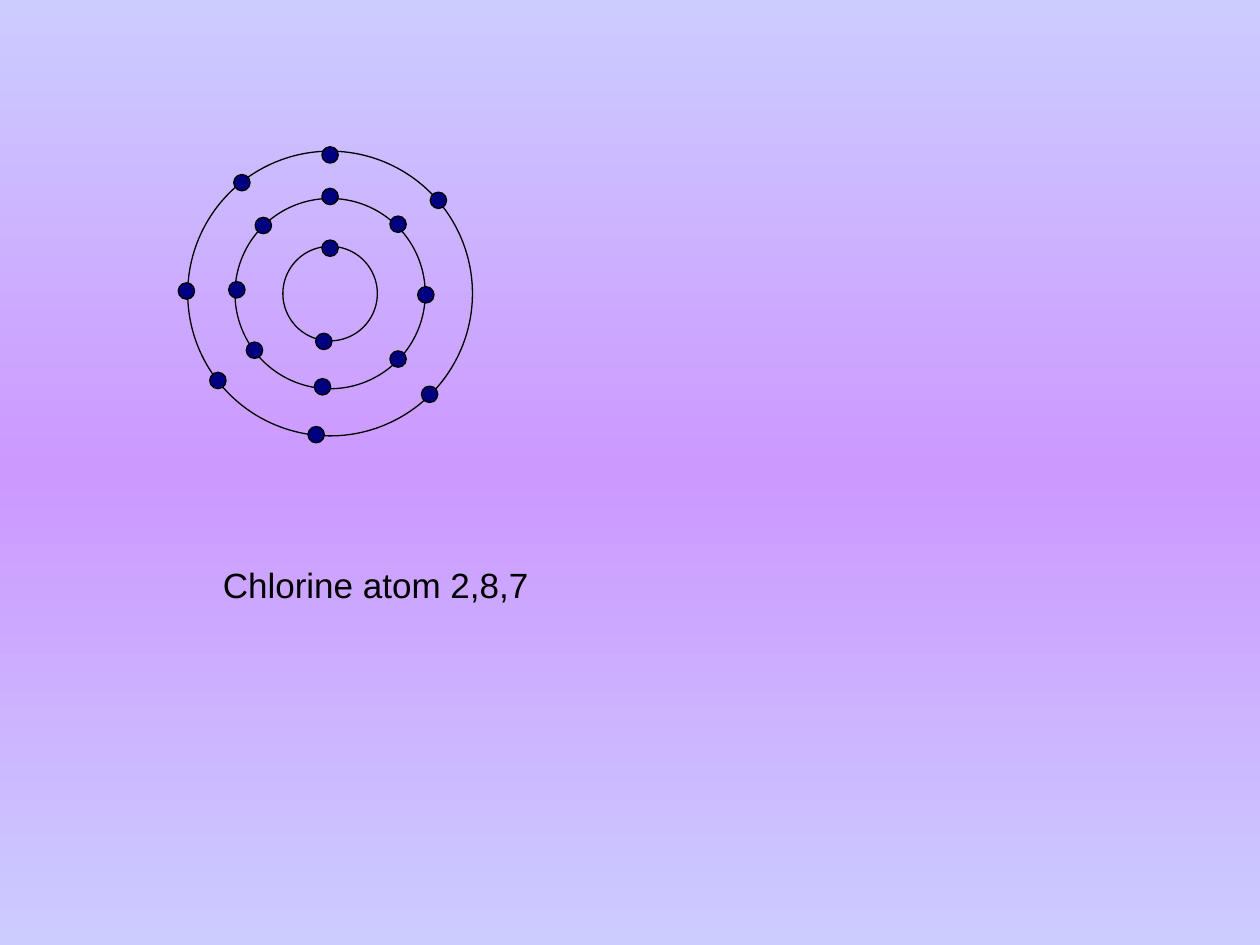
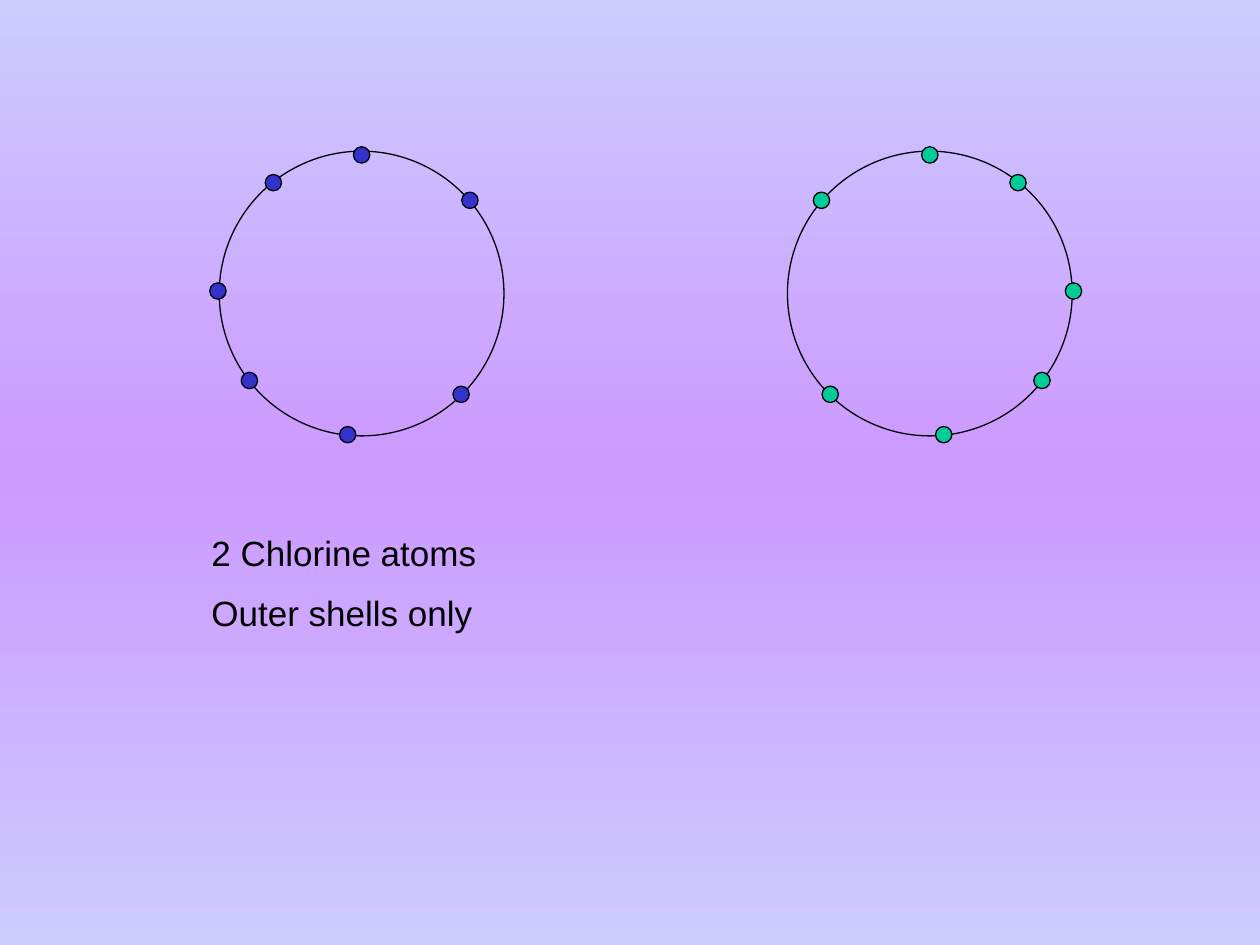
"""Build two slides showing the electron shells of chlorine atoms."""
from copy import deepcopy

from pptx import Presentation
from pptx.dml.color import RGBColor
from pptx.enum.shapes import MSO_SHAPE
from pptx.enum.text import MSO_AUTO_SIZE
from pptx.oxml.ns import qn
from pptx.util import Inches, Pt

OVAL = MSO_SHAPE.OVAL
GROW = MSO_AUTO_SIZE.SHAPE_TO_FIT_TEXT
FONT = "Arial"
COLORS = {
    "edge": "CCCCFF", "middle": "CC99FF", "ink": "000000",
    "navy": "000080", "blue": "3333CC", "green": "00CC99",
}
ELECTRON_SIZE = 0.13
ATOM_TOP_CENTER = 2.33

# Each shell: diameter and electron centres measured from the nucleus.
INNER_SHELL = (0.75, [(-0.05, 0.38), (0, -0.36)])
MIDDLE_SHELL = (1.51, [
    (0.54, 0.52), (-0.6, 0.45), (-0.53, -0.54), (0.76, 0.01),
    (-0.74, -0.03), (0, -0.77), (-0.06, 0.74), (0.54, -0.55),
])
OUTER_SHELL = (2.26, [
    (0, -1.1), (-0.7, -0.88), (-1.14, -0.02), (-0.89, 0.69),
    (-0.11, 1.12), (0.79, 0.8), (0.86, -0.74),
])


def rgb(name):
    """Return the named colour."""
    return RGBColor.from_string(COLORS[name])


def set_background(master):
    """Give every slide the vertical three-stop gradient."""
    fill = master.background.fill
    fill.gradient()
    fill.gradient_angle = 270
    stop_list = master.element.find(".//" + qn("a:gsLst"))
    stop_list.append(deepcopy(stop_list[0]))
    for index, (stop, name) in enumerate(
            zip(fill.gradient_stops, ("edge", "middle", "edge"))):
        stop.position = index / 2
        stop.color.rgb = rgb(name)


def add_circle(shapes, center_x, center_y, diameter, color=None):
    """Draw an outlined circle, filled only when a colour is given."""
    circle = shapes.add_shape(
        OVAL, Inches(center_x - diameter / 2), Inches(center_y - diameter / 2),
        Inches(diameter), Inches(diameter))
    circle.shadow.inherit = False
    circle.line.color.rgb = rgb("ink")
    circle.line.width = Pt(0.75)
    if color:
        circle.fill.solid()
        circle.fill.fore_color.rgb = rgb(color)
    else:
        circle.fill.background()


def add_atom(page, center_x, shells, color, mirrored=False):
    """Draw a grouped atom from its shells and their electrons."""
    shapes = page.shapes.add_group_shape().shapes
    side = -1 if mirrored else 1
    for diameter, _ in shells:
        add_circle(shapes, center_x, ATOM_TOP_CENTER, diameter)
    for _, electrons in shells:
        for across, down in electrons:
            add_circle(shapes, center_x + side * across,
                       ATOM_TOP_CENTER + down, ELECTRON_SIZE, color)


def add_text(page, text, left, top, width, height, size=20, color="ink"):
    """Write one paragraph for each line of text."""
    box = page.shapes.add_textbox(
        Inches(left), Inches(top), Inches(width), Inches(height))
    frame = box.text_frame
    frame.word_wrap = True
    frame.auto_size = GROW
    frame.text = text
    for para in frame.paragraphs:
        para.space_before = Pt(size / 2)
        for span in para.runs:
            span.font.name = FONT
            span.font.size = Pt(size)
            span.font.color.rgb = rgb(color)


def main():
    """Build and save the deck."""
    deck = Presentation()
    deck.slide_width, deck.slide_height = Inches(10), Inches(7.5)
    set_background(deck.slide_master)
    blank = deck.slide_layouts[6]

    page = deck.slides.add_slide(blank)
    add_atom(page, 2.62, [INNER_SHELL, MIDDLE_SHELL, OUTER_SHELL], "navy")
    add_text(page, "Chlorine atom 2,8,7", 1.67, 4.42, 5.5, 0.43)

    page = deck.slides.add_slide(blank)
    add_atom(page, 7.38, [OUTER_SHELL], "green", mirrored=True)
    add_atom(page, 2.87, [OUTER_SHELL], "blue")
    add_text(page, "2 Chlorine atoms\nOuter shells only", 1.58, 4.17, 6.5, 0.93)

    deck.save("out.pptx")


if __name__ == "__main__":
    main()
